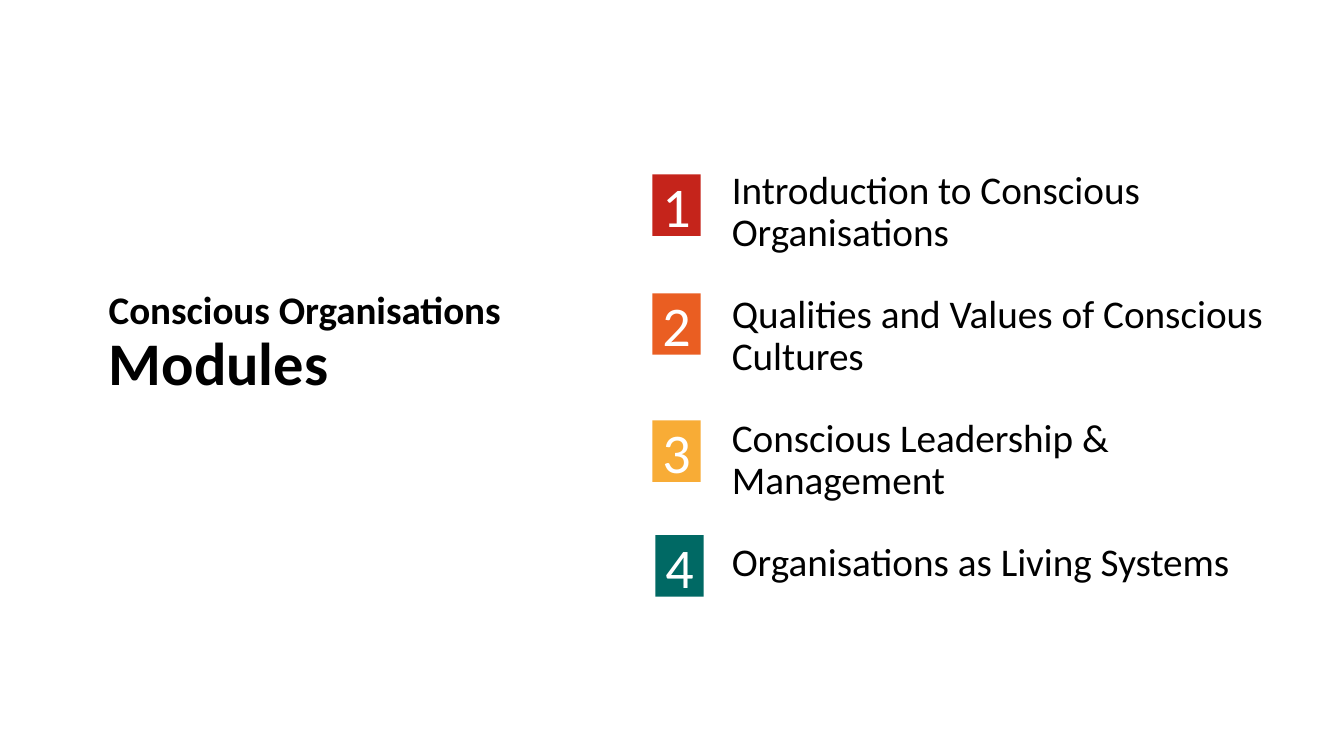
from pptx import Presentation
from pptx.dml.color import RGBColor
from pptx.enum import shapes, text
from pptx.util import Inches, Pt

BLACK = RGBColor(0x00, 0x00, 0x00)
WHITE = RGBColor(0xFF, 0xFF, 0xFF)
RED = RGBColor(0xC5, 0x24, 0x1B)
ORANGE = RGBColor(0xEA, 0x5E, 0x22)
AMBER = RGBColor(0xF8, 0xAC, 0x36)
TEAL = RGBColor(0x00, 0x69, 0x64)

MODULES = [
    ("Introduction to Conscious Organisations", RED, 6.47, 1.73),
    ("Qualities and Values of Conscious Cultures", ORANGE, 6.47, 2.91),
    ("Conscious Leadership & Management", AMBER, 6.47, 4.17),
    ("Organisations as Living Systems", TEAL, 6.5, 5.31),
]


def add_text_frame(page, left, top, width, height, anchor):
    box = page.shapes.add_textbox(Inches(left), Inches(top), Inches(width), Inches(height))
    frame = box.text_frame
    frame.word_wrap = True
    frame.vertical_anchor = anchor
    return frame


def add_span(para, words, size, color, bold=False):
    span = para.add_run()
    span.text = words
    span.font.name = "Calibri"
    span.font.size = Pt(size)
    span.font.bold = bold
    span.font.color.rgb = color


deck = Presentation()
deck.slide_width = Inches(13.33)
deck.slide_height = Inches(7.5)
page = deck.slides.add_slide(deck.slide_layouts[6])

title = add_text_frame(page, 0.98, 2.26, 4.3, 1.74, text.MSO_ANCHOR.BOTTOM)
para = title.paragraphs[0]
para.line_spacing = 0.9
add_span(para, "Conscious Organisations", 27.9, BLACK, bold=True)
para.add_line_break()
add_span(para, "Modules", 43.2, BLACK, bold=True)

module_list = add_text_frame(page, 7.16, 1.08, 5.98, 5.33, text.MSO_ANCHOR.MIDDLE)
for number, (name, color, left, top) in enumerate(MODULES, start=1):
    if number == 1:
        para = module_list.paragraphs[0]
    else:
        para = module_list.add_paragraph()
        para.space_before = Pt(10)
    para.line_spacing = 0.9
    para.space_after = Pt(18)
    add_span(para, name, 28, BLACK)

    badge = page.shapes.add_shape(
        shapes.MSO_SHAPE.RECTANGLE, Inches(left), Inches(top), Inches(0.48), Inches(0.61)
    )
    badge.shadow.inherit = False
    badge.fill.solid()
    badge.fill.fore_color.rgb = color
    badge.line.fill.background()
    badge.text_frame.vertical_anchor = text.MSO_ANCHOR.MIDDLE
    para = badge.text_frame.paragraphs[0]
    para.alignment = text.PP_ALIGN.CENTER
    add_span(para, str(number), 40, WHITE)

deck.save("out.pptx")
